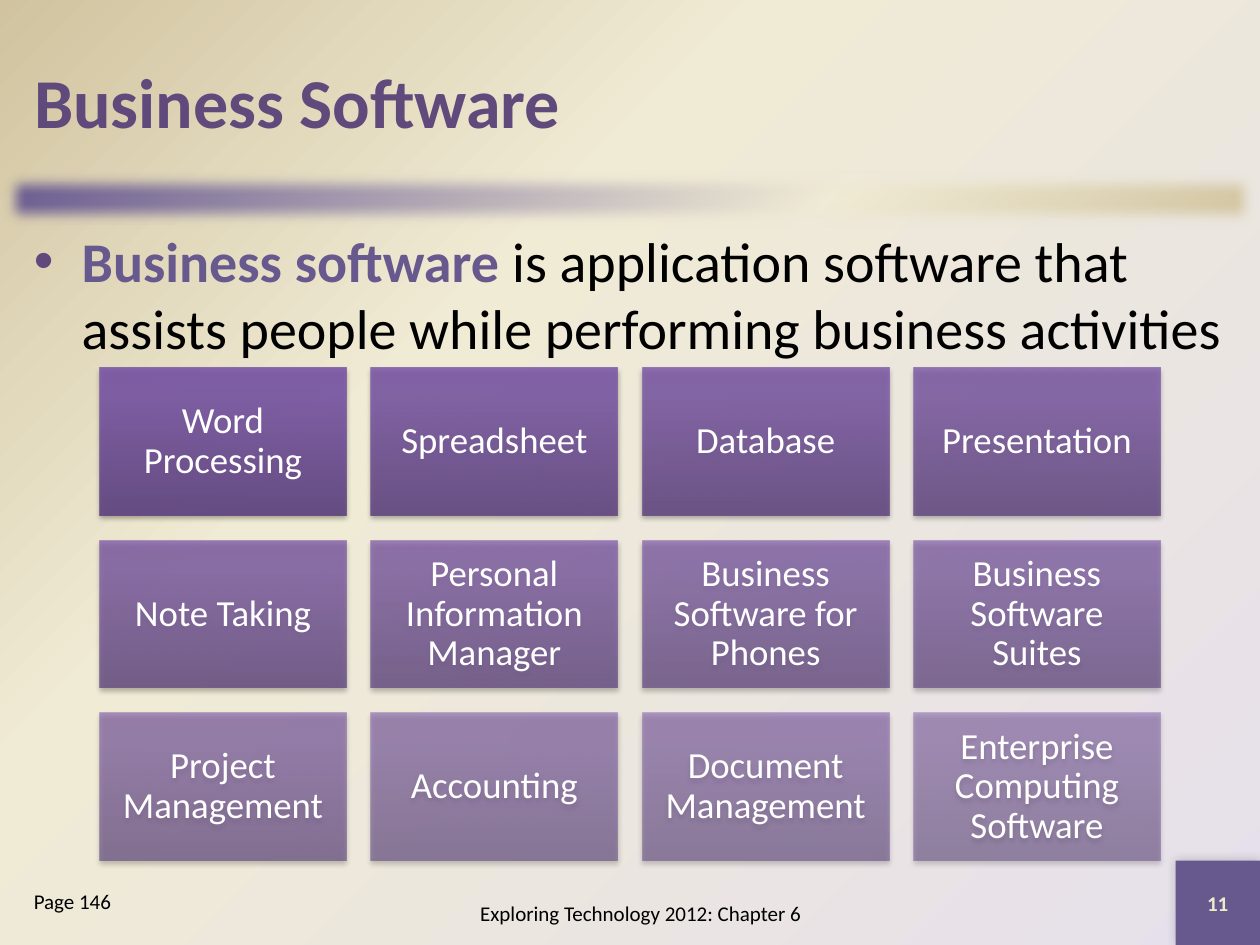
from lxml.etree import SubElement
from pptx import Presentation
from pptx.dml.color import RGBColor
from pptx.enum.shapes import MSO_SHAPE
from pptx.enum.text import MSO_ANCHOR, PP_ALIGN
from pptx.oxml.ns import qn
from pptx.util import Inches, Pt

FONT = "Calibri"
COLORS = {
    "title": "604A7B", "accent": "67588E", "cream": "F0EBD5", "tan": "D1C39F",
    "lavender": "E6E0EC", "number": "EEEBCA", "black": "000000", "white": "FFFFFF",
    "cell_dark": "5F4480", "cell_mid": "7B58A6", "cell_light": "7C57A8",
}
CATEGORIES = [
    ["Word Processing", "Spreadsheet", "Database", "Presentation"],
    ["Note Taking", "Personal Information Manager",
     "Business Software for Phones", "Business Software Suites"],
    ["Project Management", "Accounting", "Document Management",
     "Enterprise Computing Software"],
]


def add_color(parent, color, alpha=100):
    node = SubElement(parent, qn("a:srgbClr"), val=COLORS[color])
    if alpha < 100:
        SubElement(node, qn("a:alpha"), val=str(round(alpha * 1000)))


def set_gradient(owner, fill, stops, angle=None, alpha=100):
    """Fill with (percent, color) stops: linear, or radial from bottom right without an angle."""
    fill.gradient()
    gradient = owner.element.find(".//" + qn("a:gradFill"))
    gradient.clear()
    gradient.set("rotWithShape", "1")
    stop_list = SubElement(gradient, qn("a:gsLst"))
    for percent, color in stops:
        add_color(SubElement(stop_list, qn("a:gs"), pos=str(percent * 1000)), color, alpha)
    if angle is None:
        circle = SubElement(gradient, qn("a:path"))
        circle.set("path", "circle")
        SubElement(circle, qn("a:fillToRect"), l="100000", t="100000")
    else:
        SubElement(gradient, qn("a:lin"), ang=str(angle * 60000), scaled="0")


def add_effect(shape, kind, **attributes):
    effects = shape.element.spPr.find(qn("a:effectLst"))
    return SubElement(effects, qn("a:" + kind),
                      **{name: str(int(value)) for name, value in attributes.items()})


def add_shadow(shape, alpha, blur, distance, angle):
    shadow = add_effect(shape, "outerShdw", blurRad=Pt(blur), dist=Pt(distance),
                        dir=angle * 60000, rotWithShape=0)
    add_color(shadow, "black", alpha)


def add_rectangle(slide, left, top, width, height):
    rectangle = slide.shapes.add_shape(MSO_SHAPE.RECTANGLE, Inches(left), Inches(top),
                                       Inches(width), Inches(height))
    rectangle.shadow.inherit = False
    rectangle.line.fill.background()
    return rectangle


def format_run(run, size, color, bold=False):
    run.font.name = FONT
    run.font.size = Pt(size)
    run.font.bold = bold
    run.font.color.rgb = RGBColor.from_string(COLORS[color])


def write(shape, text, size, color, bold=False, align=PP_ALIGN.CENTER,
          anchor=MSO_ANCHOR.MIDDLE):
    frame = shape.text_frame
    frame.text = text
    frame.word_wrap = True
    frame.vertical_anchor = anchor
    paragraph = frame.paragraphs[0]
    paragraph.alignment = align
    format_run(paragraph.runs[0], size, color, bold)
    return paragraph


def add_text_box(slide, left, top, width, height):
    return slide.shapes.add_textbox(Inches(left), Inches(top), Inches(width), Inches(height))


def add_title(slide, text):
    title = slide.shapes.title
    title.left, title.top = Inches(0.17), Inches(0.17)
    title.width, title.height = Inches(9.67), Inches(1.25)
    write(title, text, 40, "title", True, PP_ALIGN.LEFT)


def add_definition(slide, term, meaning):
    box = add_text_box(slide, 0.17, 1.75, 9.67, 1.17)
    paragraph = write(box, term, 32, "accent", True, PP_ALIGN.LEFT, MSO_ANCHOR.TOP)
    explanation = paragraph.add_run()
    explanation.text = meaning
    format_run(explanation, 32, "black")
    paragraph.space_before = Pt(6.4)
    properties = paragraph._p.get_or_add_pPr()
    properties.set("marL", str(Inches(0.38)))
    properties.set("indent", str(Inches(-0.38)))
    add_color(SubElement(properties, qn("a:buClr")), "title")
    SubElement(properties, qn("a:buFont"), typeface="Arial")
    SubElement(properties, qn("a:buChar"), char="•")


def add_category(slide, left, top, text, alpha):
    cell = add_rectangle(slide, left, top, 1.96, 1.17)
    set_gradient(cell, cell.fill,
                 [(0, "cell_dark"), (80, "cell_mid"), (100, "cell_light")], 270, alpha)
    add_shadow(cell, 35, 3.1, 1.8, 90)
    write(cell, text, 21, "white").line_spacing = 0.9


def add_category_grid(slide):
    """Cells grow more transparent, from 90 % to 50 % opacity, in reading order."""
    for row, names in enumerate(CATEGORIES):
        for column, name in enumerate(names):
            position = row * len(names) + column
            add_category(slide, 0.79 + 6.46 / 3 * column, 2.92 + 1.37 * row,
                         name, 90 - 40 * position / 11)


def add_decoration(slide):
    set_gradient(slide, slide.background.fill,
                 [(0, "lavender"), (65, "cream"), (100, "tan")])
    divider = add_rectangle(slide, 0, 1.33, 10, 0.5)
    set_gradient(divider, divider.fill, [(0, "accent"), (65, "cream"), (100, "tan")], 45)
    add_effect(divider, "softEdge", rad=Inches(0.12))


def add_footer(slide):
    corner = add_rectangle(slide, 9.33, 6.83, 0.67, 0.67)
    corner.fill.solid()
    corner.fill.fore_color.rgb = RGBColor.from_string(COLORS["accent"])
    add_shadow(corner, 20, 6, 0, 225)
    write(corner, "11", 12, "number", True)
    write(add_text_box(slide, 3, 7, 4.17, 0.5),
          "Exploring Technology 2012: Chapter 6", 12, "black")
    page = write(add_text_box(slide, 0.17, 7, 1.83, 0.5), "Page 146", 12, "black",
                 align=PP_ALIGN.LEFT, anchor=MSO_ANCHOR.TOP)
    page.space_before = Pt(2.4)


def main():
    deck = Presentation()
    deck.slide_width, deck.slide_height = Inches(10), Inches(7.5)
    slide = deck.slides.add_slide(deck.slide_layouts[5])
    add_decoration(slide)
    add_title(slide, "Business Software")
    add_definition(slide, "Business software ",
                   "is application software that assists people while "
                   "performing business activities")
    add_category_grid(slide)
    add_footer(slide)
    deck.save("out.pptx")


if __name__ == "__main__":
    main()
